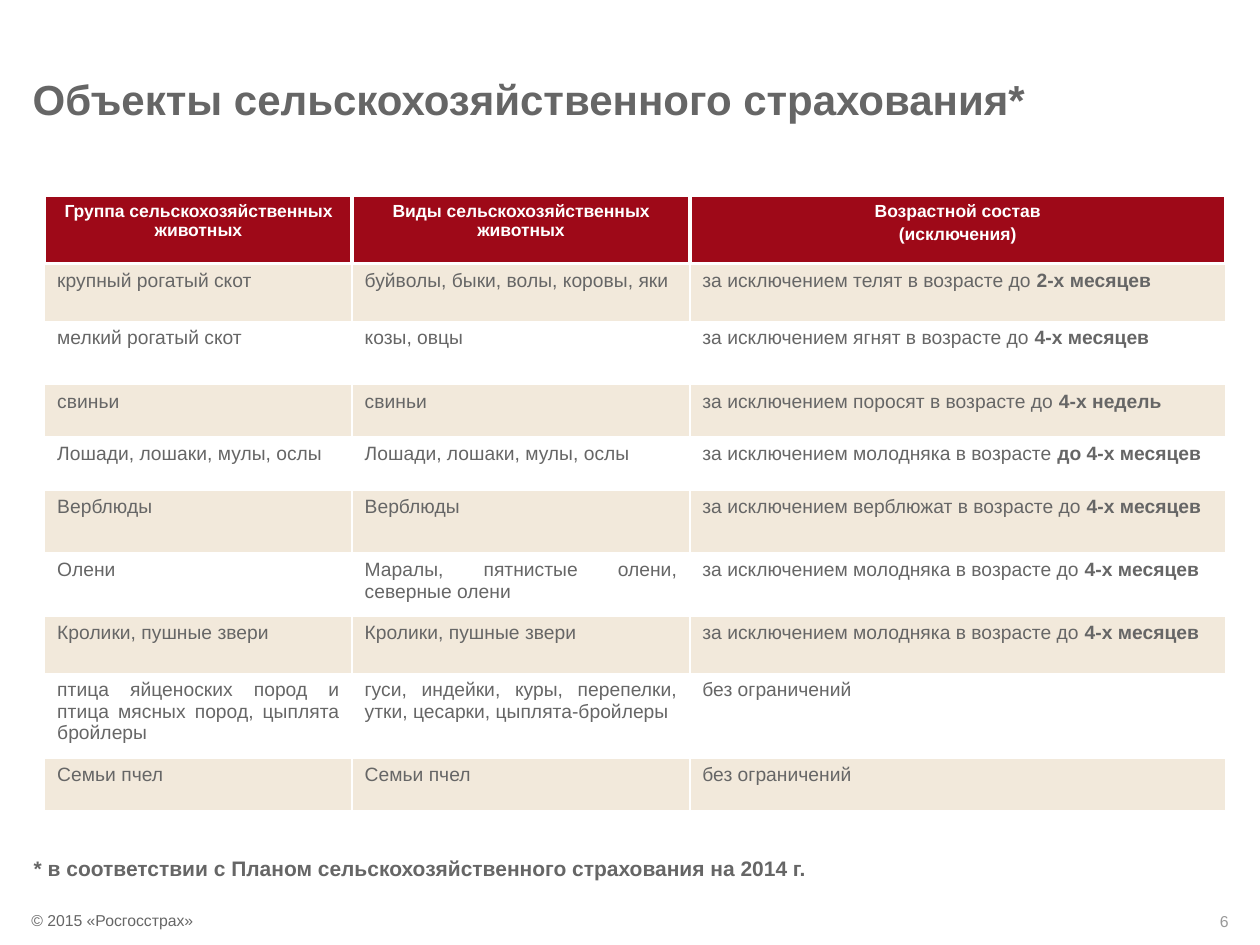
from dataclasses import dataclass

import pptx
import pptx.dml.color
import pptx.enum.text
import pptx.oxml
import pptx.oxml.ns
import pptx.util
from pptx.util import Pt

COLORS = {"header": "9E0918", "band": "F2E9DB", "text": "666666",
          "page": "999999", "white": "FFFFFF"}
FONT = "Arial"
ALIGN = pptx.enum.text.PP_ALIGN
ANCHOR = pptx.enum.text.MSO_ANCHOR


@dataclass
class AnimalGroup:
    name: str
    species: str
    exclusion: str
    age: str
    height: float


HEADINGS = ["Группа сельскохозяйственных животных",
            "Виды сельскохозяйственных животных",
            "Возрастной состав\n(исключения)"]
HEADER_HEIGHT = 38.9
COLUMN_WIDTHS = [175.7, 193, 306]
YOUNG = "за исключением молодняка в возрасте "
GROUPS = [
    AnimalGroup("крупный рогатый скот", "буйволы, быки, волы, коровы, яки",
                "за исключением телят в возрасте до ", "2-х месяцев", 33.1),
    AnimalGroup("мелкий рогатый скот", "козы, овцы",
                "за исключением ягнят в возрасте до ", "4-х месяцев", 36.3),
    AnimalGroup("свиньи", "свиньи",
                "за исключением поросят в возрасте до ", "4-х недель", 29.9),
    AnimalGroup("Лошади, лошаки, мулы, ослы", "Лошади, лошаки, мулы, ослы",
                YOUNG, "до 4-х месяцев", 30.2),
    AnimalGroup("Верблюды", "Верблюды",
                "за исключением верблюжат в возрасте до ", "4-х месяцев", 36),
    AnimalGroup("Олени", "Маралы, пятнистые олени, северные олени",
                YOUNG + "до ", "4-х месяцев", 36),
    AnimalGroup("Кролики, пушные звери", "Кролики, пушные звери",
                YOUNG + "до ", "4-х месяцев", 32.8),
    AnimalGroup("птица яйценоских пород и птица мясных пород, цыплята бройлеры",
                "гуси, индейки, куры, перепелки, утки, цесарки, цыплята-бройлеры",
                "без ограничений", "", 48.6),
    AnimalGroup("Семьи пчел", "Семьи пчел", "без ограничений", "", 29.9),
]


def rgb(name: str) -> pptx.dml.color.RGBColor:
    return pptx.dml.color.RGBColor.from_string(COLORS[name])


def write(frame, text: str, *, size: float, color: str = "text",
          bold: bool = False, bold_end: str = "", align=ALIGN.LEFT,
          anchor=ANCHOR.TOP) -> None:
    """Fill a text frame, one paragraph per line; bold_end follows the last line."""
    frame.word_wrap = True
    frame.vertical_anchor = anchor
    lines = text.split("\n")
    for number, line in enumerate(lines):
        paragraph = frame.paragraphs[0] if number == 0 else frame.add_paragraph()
        paragraph.alignment = align
        paragraph.space_before = Pt(0.2 * size if number else 0)
        parts = [(line, bold)]
        if bold_end and number == len(lines) - 1:
            parts.append((bold_end, True))
        for words, is_bold in parts:
            run = paragraph.add_run()
            run.text = words
            run.font.name = FONT
            run.font.size = Pt(size)
            run.font.bold = is_bold
            run.font.color.rgb = rgb(color)


def add_label(slide, text: str, left: float, top: float, width: float,
              height: float, **text_format) -> None:
    label = slide.shapes.add_textbox(Pt(left), Pt(top), Pt(width), Pt(height))
    write(label.text_frame, text, **text_format)


def style_cell(cell, fill: str, borders: dict[str, float]) -> None:
    """Set white borders, keyed by side letter with widths in points, then the fill."""
    properties = cell._tc.get_or_add_tcPr()
    for side, width in borders.items():
        properties.append(pptx.oxml.parse_xml(
            f'<a:ln{side} {pptx.oxml.ns.nsdecls("a")} w="{Pt(width)}"><a:solidFill>'
            f'<a:srgbClr val="{COLORS["white"]}"/></a:solidFill></a:ln{side}>'))
    if fill:
        cell.fill.solid()
        cell.fill.fore_color.rgb = rgb(fill)
    else:
        cell.fill.background()


def add_animal_table(slide) -> None:
    heights = [HEADER_HEIGHT] + [group.height for group in GROUPS]
    table = slide.shapes.add_table(
        len(heights), len(COLUMN_WIDTHS), Pt(25.5), Pt(111.6),
        Pt(sum(COLUMN_WIDTHS)), Pt(sum(heights))).table
    table.first_row = table.horz_banding = False
    for column, width in zip(table.columns, COLUMN_WIDTHS):
        column.width = Pt(width)
    for row, height in zip(table.rows, heights):
        row.height = Pt(height)

    for cell, heading in zip(table.rows[0].cells, HEADINGS):
        style_cell(cell, "header", dict.fromkeys("LRTB", 2.25))
        write(cell.text_frame, heading, size=10, color="white", bold=True,
              align=ALIGN.CENTER)
    for number, group in enumerate(GROUPS):
        entries = [(group.name, ""), (group.species, ""),
                   (group.exclusion, group.age)]
        borders = dict.fromkeys("LRTB", 1)
        if number == 0:
            borders["T"] = 2.25
        for cell, (text, bold_end) in zip(table.rows[number + 1].cells, entries):
            style_cell(cell, "" if number % 2 else "band", borders)
            write(cell.text_frame, text, size=11, bold_end=bold_end,
                  align=ALIGN.JUSTIFY)


def main() -> None:
    presentation = pptx.Presentation()
    presentation.slide_width, presentation.slide_height = Pt(720), Pt(540)
    slide = presentation.slides.add_slide(presentation.slide_layouts[5])

    title = slide.shapes.title
    title.left, title.top, title.width, title.height = (
        Pt(11.5), Pt(16.6), Pt(583.2), Pt(79.2))
    write(title.text_frame, "Объекты сельскохозяйственного страхования*",
          size=24, bold=True, anchor=ANCHOR.MIDDLE)

    add_animal_table(slide)
    add_label(slide,
              "* в соответствии с Планом сельскохозяйственного страхования на 2014 г.",
              12.2, 485.3, 666.7, 21.6, size=12, bold=True)
    add_label(slide, "© 2015 «Росгосстрах»", 10.8, 517, 185.8, 18, size=9)
    add_label(slide, "6", 652.3, 517.7, 56.9, 18, size=9, color="page",
              align=ALIGN.RIGHT)
    presentation.save("out.pptx")


if __name__ == "__main__":
    main()
